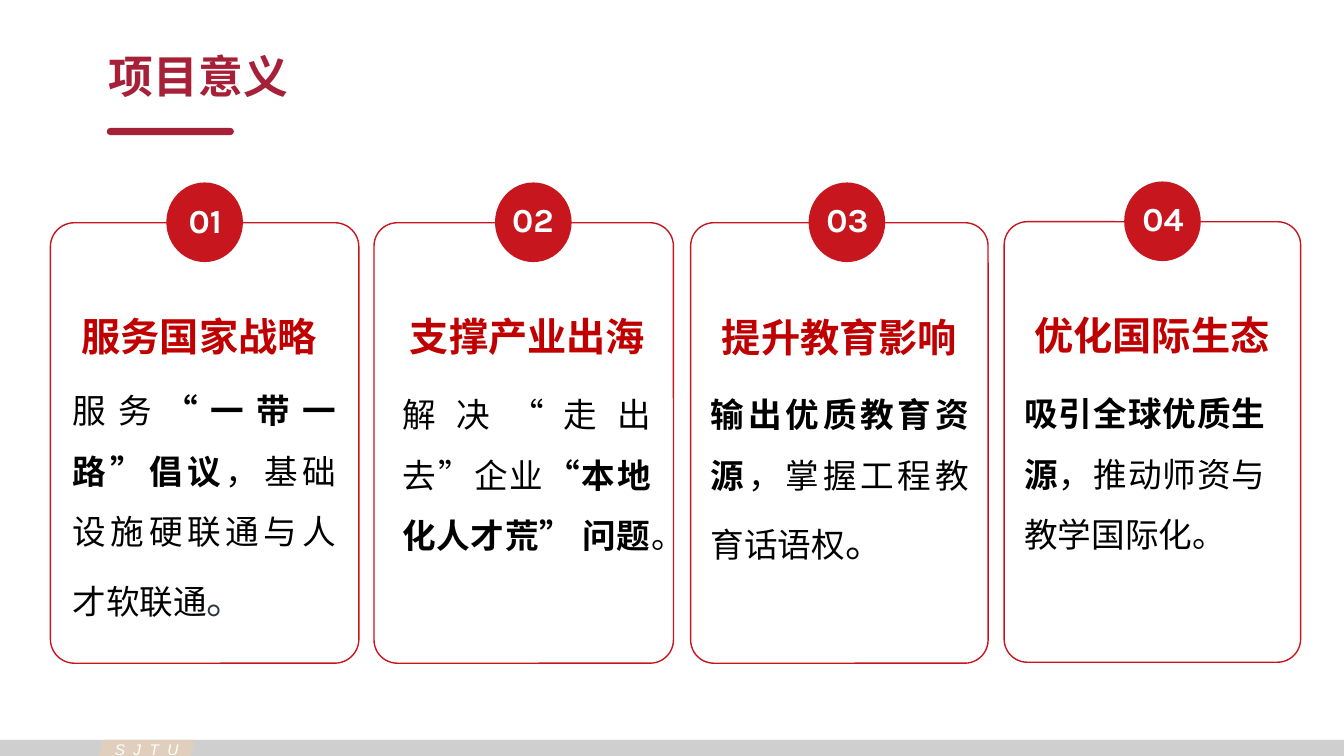
from pptx import Presentation
from pptx import util as u
from pptx.dml.color import RGBColor
from pptx.enum import lang, shapes, text
from pptx.oxml import ns
from lxml import etree

HUES = {"wine": "A62038", "red": "C8161E", "deep": "C00000", "ink": "000000",
        "slate": "2C3741", "gray": "BFBFBF", "sand": "E0CFBD", "white": "FFFFFF"}
HAN = "Noto Sans CJK SC"
KIND = shapes.MSO_SHAPE
SIDE = text.PP_ALIGN

CARDS = [
    {"box": (0.5, 2.21, 3.06), "head": (0.62, 3.05, 2.71), "body": (0.62, 3.62, 2.81, 2.63),
     "dot": 1.65, "num": (1.72, 1.93), "name": "服务国家战略", "font": HAN,
     "runs": [("服务", 24, "ink", False), ("“一带一路”倡议", 24, "ink", True),
              ("，基础设施硬联通与人才软联通", 24, "ink", False), ("。", 28, "slate", False)]},
    {"box": (3.71, 2.21, 2.97), "head": (3.89, 3.05, 2.68), "body": (3.89, 3.66, 2.67, 1.85),
     "dot": 4.91, "num": (4.97, 1.92), "name": "支撑产业出海", "font": "Arial",
     "runs": [("解决“走出去”企业", 24, "ink", False),
              ("“本地化人才荒” 问题", 24, "ink", True), ("。", 24, "ink", False)]},
    {"box": (6.85, 2.21, 2.95), "head": (6.85, 3.06, 2.95), "body": (6.95, 3.66, 2.76, 1.92),
     "dot": 8.02, "num": (8.09, 1.92), "name": "提升教育影响", "font": "Arial",
     "runs": [("输出优质教育资源", 24, "ink", True), ("，掌握工程教育话语权", 24, "ink", False),
              ("。", 28, "ink", False)]},
    {"box": (9.96, 2.2, 2.94), "head": (9.96, 3.04, 2.93), "body": (10.06, 3.65, 2.59, 1.85),
     "dot": 11.15, "num": (11.22, 1.91), "name": "优化国际生态", "font": "Arial",
     "runs": [("吸引全球优质生源", 24, "ink", True),
              ("，推动师资与教学国际化。", 24, "ink", False)]},
]


def hue(name):
    """Return the named colour."""
    return RGBColor.from_string(HUES[name])


def draw(slide, kind, at, fill=None, line=None, adj=()):
    """Add a preset shape with an optional fill and outline."""
    shape = slide.shapes.add_shape(kind, *map(u.Inches, at))
    shape.shadow.inherit = False
    for i, value in enumerate(adj):
        shape.adjustments[i] = value
    if fill:
        shape.fill.solid()
        shape.fill.fore_color.rgb = hue(fill)
    else:
        shape.fill.background()
    if line:
        shape.line.color.rgb = hue(line)
        shape.line.width = u.Pt(1)
    else:
        shape.line.fill.background()
    return shape


def write(slide, at, runs, font, side=SIDE.LEFT, gap=None, wrap=True, grow=True):
    """Add a one-paragraph text box made of (words, size, colour, bold) runs."""
    frame = slide.shapes.add_textbox(*map(u.Inches, at)).text_frame
    frame.word_wrap = wrap
    frame.auto_size = text.MSO_AUTO_SIZE.SHAPE_TO_FIT_TEXT if grow else text.MSO_AUTO_SIZE.NONE
    para = frame.paragraphs[0]
    para.alignment = side
    para.line_spacing = gap
    for words, size, tint, bold in runs:
        run = para.add_run()
        run.text = words
        run.font.size = u.Pt(size)
        run.font.bold = bold
        run.font.color.rgb = hue(tint)
        run.font.name = font
        run.font.language_id = lang.MSO_LANGUAGE_ID.SIMPLIFIED_CHINESE
        etree.SubElement(run._r.get_or_add_rPr(), ns.qn("a:ea"), typeface=HAN)
    return frame


def footer(slide):
    """Add the bottom band and its tag."""
    band = draw(slide, KIND.RECTANGLE, (0, 7.34, 13.33, 0.16), "gray")
    tint = band.fill._xPr.find(".//" + ns.qn("a:srgbClr"))
    etree.SubElement(tint, ns.qn("a:alpha"), val="75000")
    draw(slide, KIND.PARALLELOGRAM, (0.98, 7.34, 0.95, 0.16), "sand")
    tag = write(slide, (1.04, 7.29, 0.93, 0.29), [("SJTU", 11, "white", False)],
                "Arial", SIDE.JUSTIFY, wrap=False)
    run = tag.paragraphs[0].runs[0]
    run.font.italic = True
    run._r.get_or_add_rPr().set("spc", "600")


def title(slide):
    """Add the heading and the bar under it."""
    draw(slide, KIND.ROUND_2_SAME_RECTANGLE, (1.06, 1.27, 1.26, 0.07), "wine", adj=(0.5, 0.5))
    frame = write(slide, (0.98, 0.42, 10.69, 0.65), [("项目意义", 32, "wine", True)],
                  "Arial", grow=False)
    frame.vertical_anchor = text.MSO_ANCHOR.MIDDLE


def panel(slide, num, card):
    """Add one numbered card."""
    top = card["box"][1]
    draw(slide, KIND.ROUNDED_RECTANGLE, (*card["box"], 4.37), line="red", adj=(0.078,))
    write(slide, card["body"], card["runs"], card["font"], SIDE.JUSTIFY, 1.5)
    write(slide, (*card["head"], 0.57), [(card["name"], 28, "deep", True)], HAN, SIDE.CENTER)
    draw(slide, KIND.OVAL, (card["dot"], top - 0.4, 0.76, 0.79), "red")
    write(slide, (*card["num"], 0.63, 0.5), [(f"{num:02}", 24, "white", True)],
          "Karla", SIDE.CENTER)


def main():
    """Build and save the slide."""
    deck = Presentation()
    deck.slide_width, deck.slide_height = u.Inches(13.33), u.Inches(7.5)
    slide = deck.slides.add_slide(deck.slide_layouts[6])
    footer(slide)
    title(slide)
    for num, card in enumerate(CARDS, 1):
        panel(slide, num, card)
    deck.save("out.pptx")


if __name__ == "__main__":
    main()
